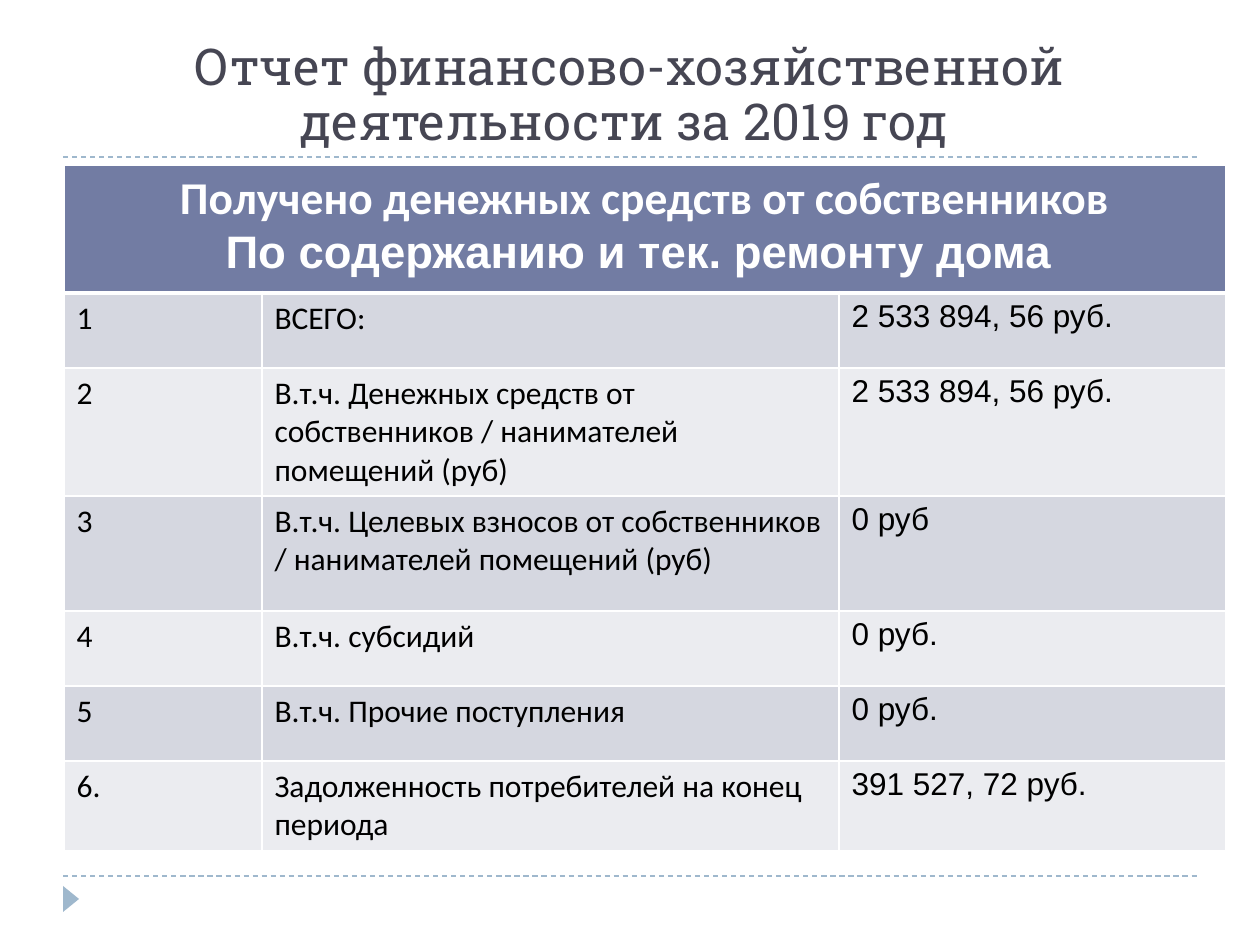
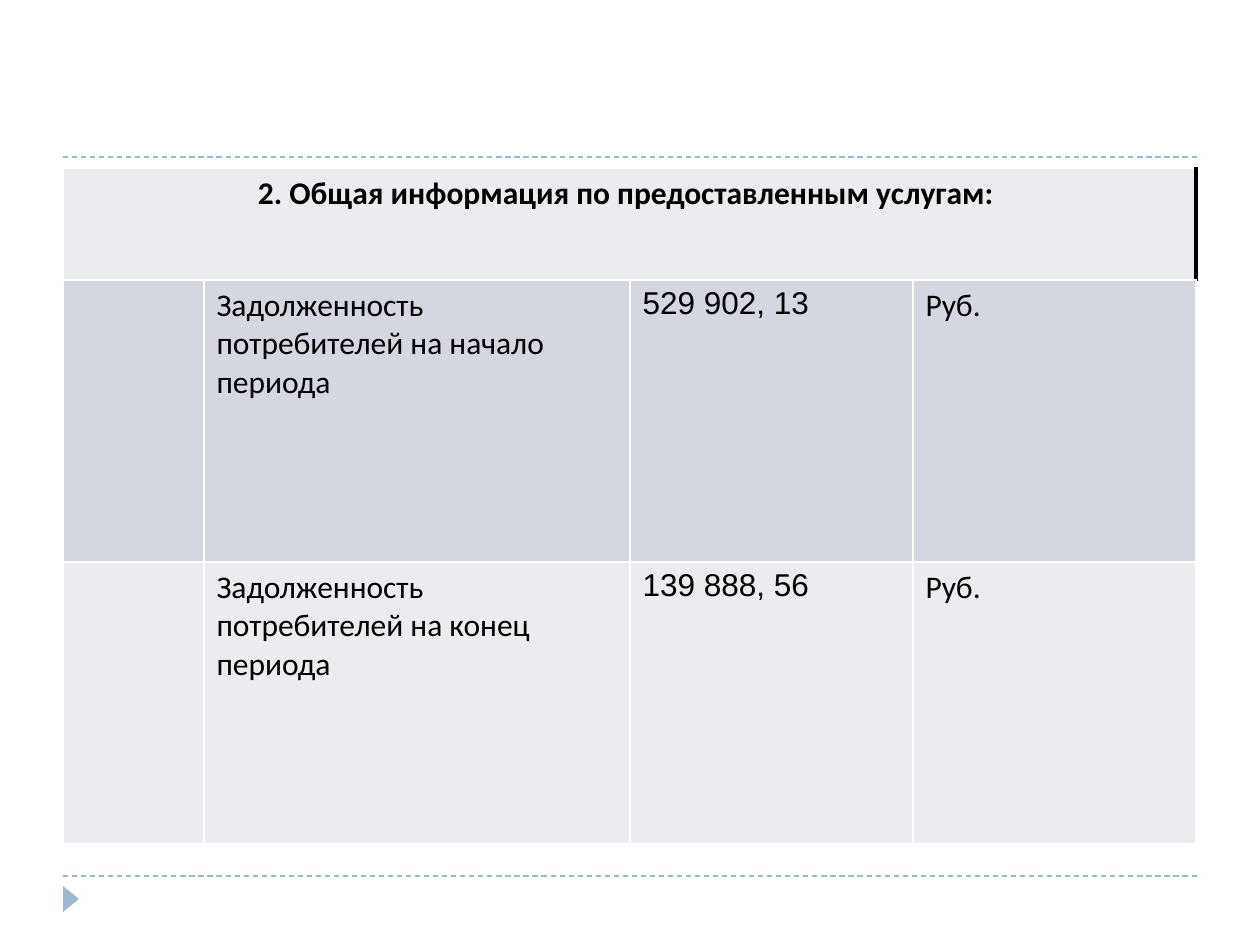
from lxml.etree import SubElement
from pptx import Presentation
from pptx.dml.color import RGBColor
from pptx.enum.dml import MSO_LINE
from pptx.enum.shapes import MSO_CONNECTOR, MSO_SHAPE
from pptx.enum.text import MSO_ANCHOR, MSO_AUTO_SIZE, PP_ALIGN
from pptx.oxml.ns import qn
from pptx.util import Pt


def px(length):
    return round(length * 914400 / 126)


def color(hex_string):
    return RGBColor.from_string(hex_string)


# Shared look
ACCENT, TITLE_COLOR, BLACK, WHITE = "9FB8CD", "464653", "000000", "FFFFFF"
BANDS = ["EBECF0", "D5D7E0"]
BODY_FONT, AMOUNT_FONT, TITLE_FONT = "Calibri", "Arial", "Roboto Slab"
AMOUNT_COLUMN = 2
LEFT, RIGHT = 63, 1197
RULE_TOPS = [876, 157]
TITLE_ONLY, BLANK = 5, 6

# Content: each header is a list of (text, font) lines
reports = [
    {
        "title": [
            ("Отчет финансово-хозяйственной деятельности за 201", TITLE_FONT),
            ("9", AMOUNT_FONT),
            (" год ", TITLE_FONT),
        ],
        "left": 64, "top": 165,
        "columns": [198, 577, 387],
        "heights": [128, 75, 128, 115, 75, 75, 89],
        "header": [
            ("Получено денежных средств от собственников", BODY_FONT),
            ("По содержанию и тек. ремонту дома ", AMOUNT_FONT),
        ],
        "header_size": 26, "header_fill": "727CA3", "header_color": WHITE,
        "header_borders": {"B": (WHITE, 3)},
        "rows": [
            ["1", "ВСЕГО:", "2 533 894, 56 руб."],
            ["2", "В.т.ч. Денежных средств от собственников / нанимателей помещений (руб)",
             "2 533 894, 56 руб."],
            ["3", "В.т.ч. Целевых взносов от собственников / нанимателей помещений (руб)",
             "0 руб"],
            ["4", "В.т.ч. субсидий", "0 руб."],
            ["5", "В.т.ч. Прочие поступления", "0 руб."],
            ["6.", "Задолженность потребителей на конец периода", "391 527, 72 руб."],
        ],
    },
    {
        "title": [],
        "left": LEFT, "top": 168,
        "columns": [141, 426, 283, 283],
        "heights": [112, 282, 282],
        "header": [("2. Общая информация по предоставленным услугам: ", BODY_FONT)],
        "header_size": 18, "header_fill": BANDS[0], "header_color": BLACK,
        "header_borders": {"R": (BLACK, 2.25)},
        "rows": [
            ["", "Задолженность потребителей на начало периода", "529 902, 13", "Руб."],
            ["", "Задолженность потребителей на конец периода", "139 888, 56", "Руб."],
        ],
    },
]

presentation = Presentation()
presentation.slide_width, presentation.slide_height = px(1260), px(945)

for report in reports:
    layout = presentation.slide_layouts[TITLE_ONLY if report["title"] else BLANK]
    slide = presentation.slides.add_slide(layout)

    # Dashed rules
    for top in RULE_TOPS:
        rule = slide.shapes.add_connector(
            MSO_CONNECTOR.STRAIGHT, px(LEFT), px(top), px(RIGHT), px(top))
        rule.line.color.rgb = color(ACCENT)
        rule.line.width = Pt(0.75)
        rule.line.dash_style = MSO_LINE.DASH
        SubElement(rule._element.spPr, qn("a:effectLst"))

    # Footer marker
    marker = slide.shapes.add_shape(
        MSO_SHAPE.ISOSCELES_TRIANGLE, px(58), px(891), px(26), px(16))
    marker.rotation = 90
    marker.shadow.inherit = False
    marker.fill.solid()
    marker.fill.fore_color.rgb = color(ACCENT)
    marker.line.fill.background()

    # Title
    if report["title"]:
        title = slide.shapes.title
        title_box = {"left": px(LEFT), "top": px(32), "width": px(1134), "height": px(126)}
        for name, value in title_box.items():
            setattr(title, name, value)
        frame_format = {"vertical_anchor": MSO_ANCHOR.BOTTOM,
                        "auto_size": MSO_AUTO_SIZE.NONE, "word_wrap": True}
        for name, value in frame_format.items():
            setattr(title.text_frame, name, value)
        paragraph = title.text_frame.paragraphs[0]
        paragraph.alignment = PP_ALIGN.CENTER
        paragraph.line_spacing = 0.9
        for text, font in report["title"]:
            run = paragraph.add_run()
            run.text = text
            run.font.name, run.font.size = font, Pt(29)
            run.font.color.rgb = color(TITLE_COLOR)

    # Table grid
    columns, heights = report["columns"], report["heights"]
    table = slide.shapes.add_table(
        len(heights), len(columns), px(report["left"]), px(report["top"]),
        px(sum(columns)), px(sum(heights))).table
    table.first_row = table.horz_banding = False
    for column, width in zip(table.columns, columns):
        column.width = px(width)
    for row, height in zip(table.rows, heights):
        row.height = px(height)
    table.cell(0, 0).merge(table.cell(0, len(columns) - 1))

    # Table cells
    for row_index in range(len(heights)):
        is_header = row_index == 0
        for column_index in range(len(columns)):
            cell = table.cell(row_index, column_index)

            borders = {side: (WHITE, 1) for side in "LRTB"}
            if is_header and column_index in (0, len(columns) - 1):
                borders.update(report["header_borders"])
            elif is_header and "B" in report["header_borders"]:
                borders["B"] = report["header_borders"]["B"]
            if row_index == 1 and "B" in report["header_borders"]:
                borders["T"] = report["header_borders"]["B"]
            for side, (border_color, width) in borders.items():
                border = SubElement(
                    cell._tc.get_or_add_tcPr(), qn(f"a:ln{side}"), w=str(Pt(width)))
                fill = SubElement(border, qn("a:solidFill"))
                SubElement(fill, qn("a:srgbClr"), val=border_color)

            cell.fill.solid()
            cell.fill.fore_color.rgb = color(
                report["header_fill"] if is_header else BANDS[row_index % 2])

            if is_header:
                lines = report["header"] if column_index == 0 else []
            else:
                font = AMOUNT_FONT if column_index == AMOUNT_COLUMN else BODY_FONT
                text = report["rows"][row_index - 1][column_index]
                lines = [(text, font)] if text else []
            for line_index, (text, font) in enumerate(lines):
                frame = cell.text_frame
                paragraph = frame.add_paragraph() if line_index else frame.paragraphs[0]
                paragraph.alignment = PP_ALIGN.CENTER if is_header else PP_ALIGN.LEFT
                run = paragraph.add_run()
                run.text = text
                font_format = {"name": font, "bold": is_header,
                               "size": Pt(report["header_size"] if is_header else 18)}
                for name, value in font_format.items():
                    setattr(run.font, name, value)
                run.font.color.rgb = color(report["header_color"] if is_header else BLACK)

presentation.save("out.pptx")
